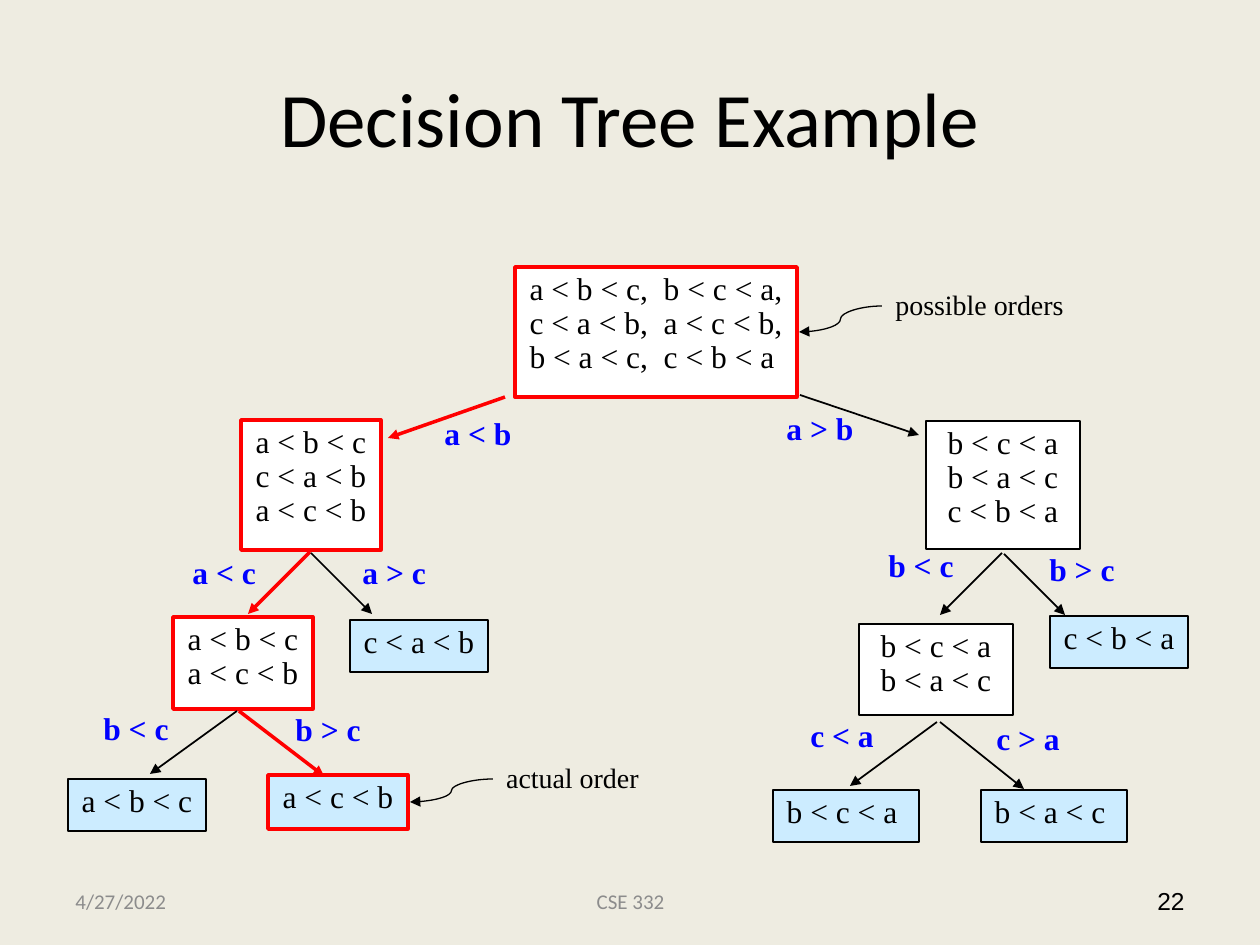
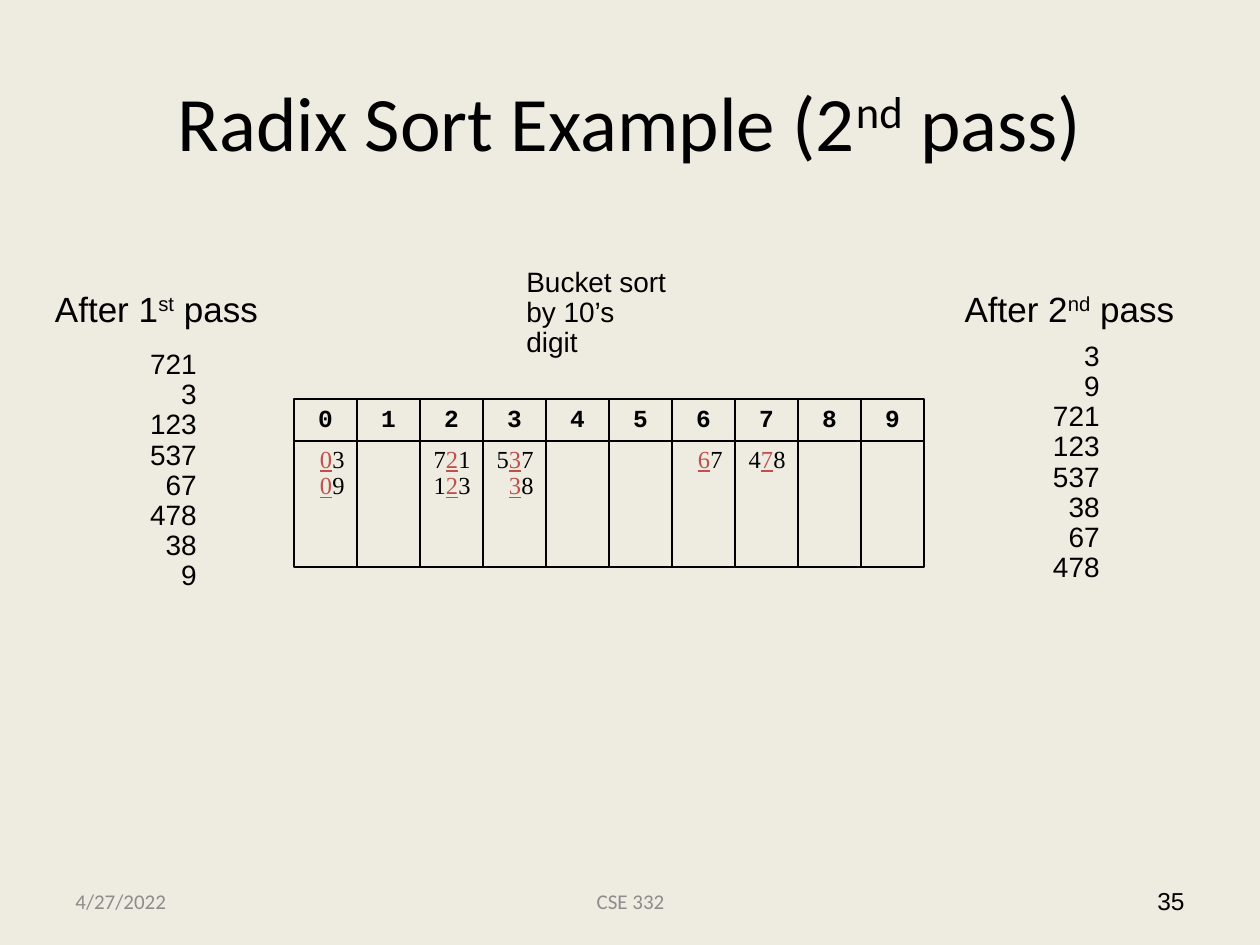
from pptx import Presentation
from pptx.dml.color import RGBColor
from pptx.enum import shapes, text
from pptx.oxml import parse_xml
from pptx.oxml.ns import nsdecls
from pptx.util import Emu, Pt

CREAM = RGBColor(0xEE, 0xEC, 0xE1)
BLACK = RGBColor(0, 0, 0)
WHITE = RGBColor(255, 255, 255)
GREY = RGBColor(0x8C, 0x8C, 0x8C)
RED = RGBColor(255, 0, 0)
BLUE = RGBColor(0, 0, 255)
SKY = RGBColor(0xCC, 0xEC, 0xFF)
BRICK = RGBColor(0xC0, 0x50, 0x4D)

SANS, SERIF, MONO, HEAD = "Arial", "Times New Roman", "Courier New", "Calibri"
LEFT, MID, RIGHT = text.PP_ALIGN.LEFT, text.PP_ALIGN.CENTER, text.PP_ALIGN.RIGHT
TOP, CENTRE = text.MSO_ANCHOR.TOP, text.MSO_ANCHOR.MIDDLE

FIRST = [721, 3, 123, 537, 67, 478, 38, 9]


def px(n):
    """Turn px into EMU."""
    return Emu(round(n * 914400 / 126))


def lift(run):
    """Raise a run as superscript."""
    run._r.get_or_add_rPr().set("baseline", "30000")


def mark(run):
    """Show a run as the digit sorted on."""
    run.font.color.rgb = BRICK
    run.font.underline = True


def write(shape, lines, size, face, color=BLACK, align=LEFT, anchor=TOP,
          bold=False, wrap=True, space=0.9, accent=lift):
    """Fill a shape with lines, whose parts between bars get the accent."""
    frame = shape.text_frame
    frame.word_wrap, frame.vertical_anchor = wrap, anchor
    for i, line in enumerate(lines):
        para = frame.add_paragraph() if i else frame.paragraphs[0]
        para.alignment, para.line_spacing = align, space
        for j, part in enumerate(line.split("|")):
            if not part:
                continue
            run = para.add_run()
            run.text = part
            font = run.font
            font.size, font.name, font.bold = Pt(size), face, bold
            font.color.rgb = color
            if j % 2:
                accent(run)


def label(slide, box, lines, size, face, **style):
    """Add a text box."""
    write(slide.shapes.add_textbox(*map(px, box)), lines, size, face, **style)


def rect(slide, box, fill=None, line=BLACK, width=1):
    """Add a rectangle."""
    shape = slide.shapes.add_shape(shapes.MSO_SHAPE.RECTANGLE, *map(px, box))
    shape.shadow.inherit = False
    if fill is None:
        shape.fill.background()
    else:
        shape.fill.solid()
        shape.fill.fore_color.rgb = fill
    shape.line.color.rgb, shape.line.width = line, Pt(width)
    return shape


def arrow(slide, ends, color=BLACK, width=1, kind=shapes.MSO_CONNECTOR.STRAIGHT):
    """Add a connector with an arrowhead at its end."""
    link = slide.shapes.add_connector(kind, *map(px, ends))
    link.line.color.rgb, link.line.width = color, Pt(width)
    link.line._get_or_add_ln().append(
        parse_xml(f'<a:tailEnd {nsdecls("a")} type="triangle"/>'))
    link._element.spPr.append(parse_xml(f'<a:effectLst {nsdecls("a")}/>'))


def base(deck, title, box, number):
    """Add a slide with its ground, title and footer."""
    slide = deck.slides.add_slide(deck.slide_layouts[6])
    slide.background.fill.solid()
    slide.background.fill.fore_color.rgb = CREAM
    label(slide, box, [title], 44, HEAD, align=MID, anchor=CENTRE, space=1)
    for x, w, words, size, face, color, align in (
            (63, 294, "4/27/2022", 12, HEAD, GREY, LEFT),
            (431, 399, "CSE 332", 12, HEAD, GREY, MID),
            (903, 294, number, 14, SANS, BLACK, RIGHT)):
        label(slide, (x, 876, w, 50), [words], size, face, color=color,
              align=align, anchor=CENTRE, space=1)
    return slide


def branch(slide, x, y, nodes, links, tests, wide=94):
    """Draw part of the tree: nodes, arrows and tests, from a corner."""
    for left, top, w, h, lines, fill, hot in nodes:
        node = rect(slide, (x + left, y + top, w, h), fill,
                    RED if hot else BLACK, 2 if hot else 1)
        write(node, lines, 18, SERIF, align=MID, wrap=False)
    for x1, y1, x2, y2, hot in links:
        arrow(slide, (x + x1, y + y1, x + x2, y + y2),
              RED if hot else BLACK, 2 if hot else 1)
    for left, top, words in tests:
        label(slide, (x + left, y + top, wide, 50), [words], 18, SERIF,
              color=BLUE, bold=True)


def remark(slide, x, y, w, drop, words):
    """Add a remark with a curved arrow to its left."""
    label(slide, (x, y, w, 46), [words], 16, SERIF, align=MID,
          anchor=CENTRE, wrap=False)
    arrow(slide, (x, y + 23, x - 83, y + 23 + drop), width=0.75,
          kind=shapes.MSO_CONNECTOR.CURVE)


def tree(deck):
    """Build the decision tree slide."""
    slide = base(deck, "Decision Tree Example", (63, 38, 1134, 158), "22")
    branch(slide, 388, 267, [
        (127, 0, 282, 130, ["a < b < c,  b < c < a,", "c < a < b,  a < c < b,",
                            "b < a < c,  c < b < a "], WHITE, True),
    ], [
        (117, 130, 0, 171, True),
        (412, 128, 531, 168, False),
    ], [(44, 145, "a < b"), (386, 140, "a > b")])
    branch(slide, 68, 420, [
        (173, 0, 140, 130, ["a < b < c", "c < a < b", "a < c < b"], WHITE, True),
        (105, 197, 140, 92, ["a < b < c", "a < c < b"], WHITE, True),
        (282, 200, 138, 52, ["c < a < b"], SKY, False),
        (0, 359, 138, 52, ["a < b < c"], SKY, False),
        (200, 355, 140, 54, ["a < c < b"], SKY, True),
    ], [
        (242, 132, 180, 194, True),
        (243, 133, 304, 194, False),
        (169, 291, 82, 354, False),
        (171, 291, 256, 356, True),
    ], [(282, 131, "a > c"), (112, 131, "a < c"),
        (23, 287, "b < c"), (215, 288, "b > c")])
    branch(slide, 773, 421, [
        (153, 0, 154, 128, ["b < c < a", " b < a < c ", "c < b < a"], WHITE, False),
        (86, 203, 154, 91, ["b < c < a", " b < a < c "], WHITE, False),
        (277, 195, 138, 52, ["c < b < a"], SKY, False),
        (0, 369, 146, 52, ["b < c < a "], SKY, False),
        (208, 369, 146, 52, ["b < a < c "], SKY, False),
    ], [
        (164, 301, 77, 365, False),
        (167, 301, 251, 368, False),
        (229, 132, 167, 194, False),
        (231, 133, 292, 194, False),
    ], [(103, 123, "b < c"), (264, 127, "b > c"),
        (25, 293, "c < a"), (211, 296, "c > a")], wide=100)
    remark(slide, 882, 283, 195, 26, "possible orders")
    remark(slide, 493, 756, 159, 23, "actual order")


def tens(n):
    """Give the tens digit."""
    return n // 10 % 10


def split(n):
    """Write a number with its tens digit between bars."""
    digits = f"{n:02}"
    return f"{digits[:-2]}|{digits[-2]}|{digits[-1]}"


def grid(slide, x, y, cell=63, head=42, body=126):
    """Draw the ten buckets from a corner."""
    for digit in range(10):
        left = x + digit * cell
        top = rect(slide, (left, y, cell, head), width=0.75)
        write(top, [str(digit)], 14, MONO, align=MID, anchor=CENTRE,
              bold=True, wrap=False)
        bin = rect(slide, (left, y + head, cell, body), width=0.75)
        held = [split(n) for n in FIRST if tens(n) == digit]
        write(bin, held, 14, SERIF, align=RIGHT, wrap=False, accent=mark)


def column(slide, x, y, nums):
    """List numbers down a column."""
    label(slide, (x, y, 72, 282), [str(n) for n in nums], 16, SANS,
          align=RIGHT, wrap=False)


def radix(deck):
    """Build the radix sort slide."""
    slide = base(deck, "Radix Sort Example (2|nd| pass)",
                 (94, 42, 1071, 158), "35")
    label(slide, (514, 262, 168, 113), ["Bucket sort", "by 10’s digit"], 16, SANS)
    grid(slide, 294, 399)
    for x, w, words in ((42, 229, "After 1|st| pass"),
                        (951, 237, "After 2|nd| pass")):
        label(slide, (x, 284, w, 54), [words], 20, SANS, align=MID,
              anchor=CENTRE, wrap=False)
    column(slide, 137, 344, FIRST)
    column(slide, 1040, 336, sorted(FIRST, key=tens))


def main():
    """Build and save the deck."""
    deck = Presentation()
    deck.slide_width, deck.slide_height = px(1260), px(945)
    tree(deck)
    radix(deck)
    deck.save("out.pptx")


if __name__ == "__main__":
    main()
